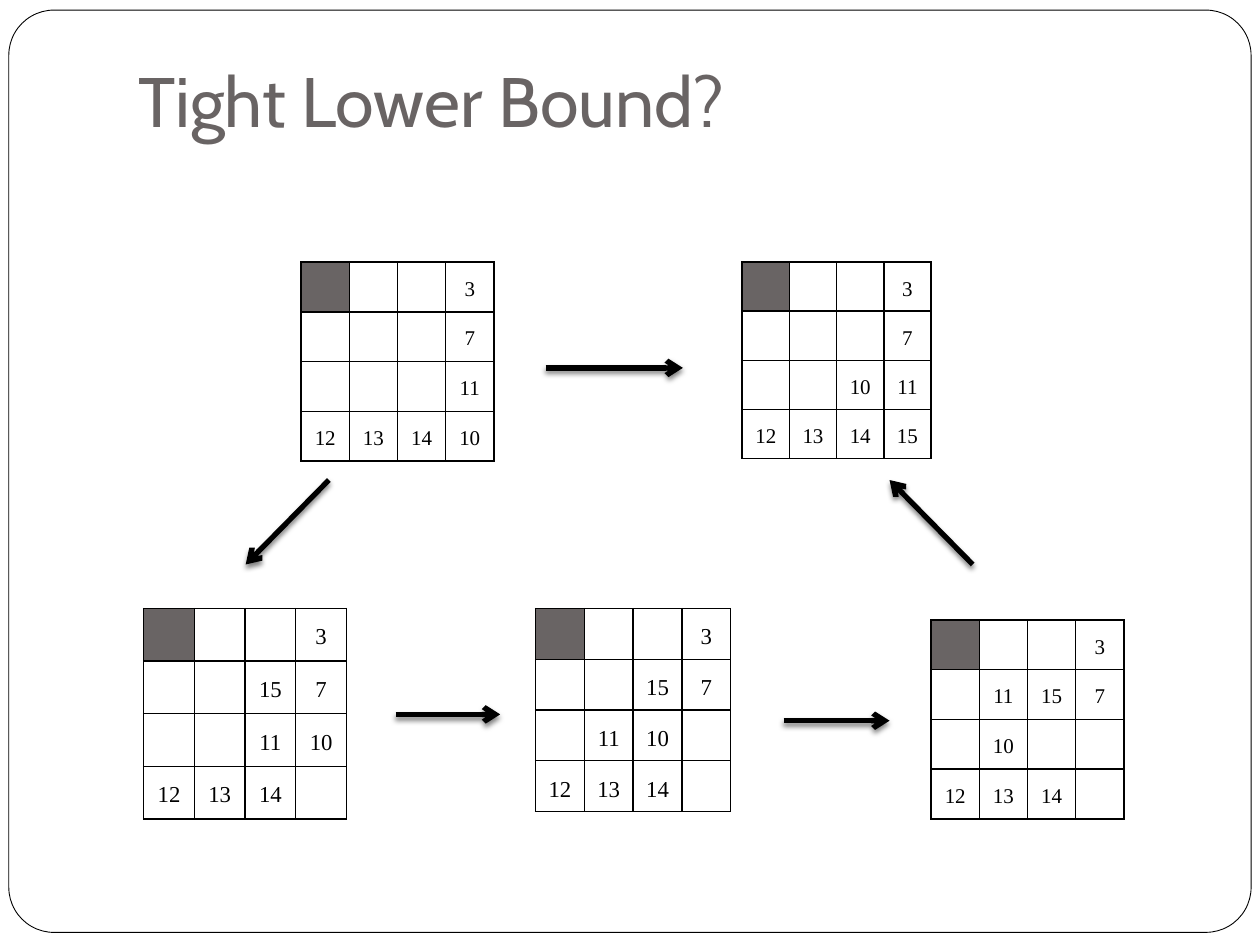
from dataclasses import dataclass
from lxml.etree import SubElement as Sub
from pptx import Presentation
from pptx.dml.color import RGBColor as RGB
from pptx.enum.shapes import MSO_CONNECTOR as Link, MSO_SHAPE as Kind
from pptx.enum.text import MSO_ANCHOR as Anchor, PP_ALIGN as Align
from pptx.oxml.ns import qn
from pptx.util import Inches, Pt


@dataclass(frozen=True)
class Theme:
    ink: RGB = RGB(0, 0, 0)
    gray: RGB = RGB(0x69, 0x64, 0x64)
    paper: RGB = RGB(255, 255, 255)
    head: str = "Cabin"
    body: str = "Times New Roman"
    title: Pt = Pt(40)
    small: Pt = Pt(12)
    large: Pt = Pt(13)
    edge: Pt = Pt(0.5)
    rule: Pt = Pt(1)
    bold: Pt = Pt(3)


theme = Theme()

BOARDS = [
    ((2.39, 2.08, 1.53, 1.58), theme.small,
     [["", "", "", "3"], ["", "", "", "7"],
      ["", "", "", "11"], ["12", "13", "14", "10"]]),
    ((5.89, 2.08, 1.5, 1.56), theme.small,
     [["", "", "", "3"], ["", "", "", "7"],
      ["", "", "10", "11"], ["12", "13", "14", "15"]]),
    ((1.14, 4.83, 1.61, 1.67), theme.large,
     [["", "", "", "3"], ["", "", "15", "7"],
      ["", "", "11", "10"], ["12", "13", "14", ""]]),
    ((4.25, 4.83, 1.55, 1.61), theme.large,
     [["", "", "", "3"], ["", "", "15", "7"],
      ["", "11", "10", ""], ["12", "13", "14", ""]]),
    ((7.39, 4.92, 1.53, 1.58), theme.small,
     [["", "", "", "3"], ["", "11", "15", "7"],
      ["", "10", "", ""], ["12", "13", "14", ""]]),
]

ARROWS = [
    (4.33, 2.92, 5.42, 2.92),
    (2.61, 3.81, 1.95, 4.48),
    (3.14, 5.67, 3.97, 5.67),
    (6.22, 5.72, 7.06, 5.72),
    (7.72, 4.48, 7.06, 3.81),
]


def inch(box):
    return [Inches(v) for v in box]


def add_frame(slide, box):
    frame = slide.shapes.add_shape(Kind.ROUNDED_RECTANGLE, *inch(box))
    frame.adjustments[0] = 0.049
    frame.shadow.inherit = False
    frame.fill.solid()
    frame.fill.fore_color.rgb = theme.paper
    frame.line.color.rgb = theme.ink
    frame.line.width = theme.edge
    slide.shapes._spTree.insert(2, frame._element)


def add_title(slide, box, text):
    title = slide.shapes.title
    title.left, title.top, title.width, title.height = inch(box)
    body = title.text_frame
    body.text = text
    body.vertical_anchor = Anchor.BOTTOM
    body.margin_bottom = Inches(0.1)
    para = body.paragraphs[0]
    para.alignment = Align.LEFT
    font = para.runs[0].font
    font.name, font.size = theme.head, theme.title
    font.color.rgb = theme.gray


def add_rules(cell):
    props = cell._tc.get_or_add_tcPr()
    for side in ("lnL", "lnR", "lnT", "lnB"):
        line = Sub(props, qn(f"a:{side}"), w=str(theme.rule))
        fill = Sub(line, qn("a:solidFill"))
        Sub(fill, qn("a:srgbClr"), val=str(theme.ink))


def fill_cell(cell, text, size, color):
    cell.margin_left = cell.margin_right = Inches(0.07)
    cell.margin_top = cell.margin_bottom = Inches(0.03)
    add_rules(cell)
    cell.fill.solid()
    cell.fill.fore_color.rgb = color
    if text:
        para = cell.text_frame.paragraphs[0]
        para.text = text
        para.alignment = Align.CENTER
        para.line_spacing = 1.5
        font = para.runs[0].font
        font.name, font.size = theme.body, size
        font.color.rgb = theme.ink


def add_board(slide, box, size, rows):
    count = len(rows)
    x, y, w, h = inch(box)
    table = slide.shapes.add_table(count, count, x, y, w, h).table
    table.first_row = table.horz_banding = False
    for r, row in enumerate(rows):
        table.rows[r].height = h // count
        table.columns[r].width = w // count
        for c, text in enumerate(row):
            color = theme.gray if r == c == 0 else theme.paper
            fill_cell(table.cell(r, c), text, size, color)


def add_arrow(slide, ends):
    arrow = slide.shapes.add_connector(Link.STRAIGHT, *inch(ends))
    arrow.line.color.rgb = theme.ink
    arrow.line.width = theme.bold
    Sub(arrow.line._get_or_add_ln(), qn("a:tailEnd"), type="arrow")
    glow = Sub(arrow._element.spPr, qn("a:effectLst"))
    shade = Sub(glow, qn("a:outerShdw"), blurRad=str(Pt(3)),
                dist=str(Pt(2)), dir="5400000", rotWithShape="0")
    tint = Sub(shade, qn("a:srgbClr"), val=str(theme.ink))
    Sub(tint, qn("a:alpha"), val="50000")


def main():
    deck = Presentation()
    deck.slide_width, deck.slide_height = Inches(10), Inches(7.5)
    slide = deck.slides.add_slide(deck.slide_layouts[5])
    add_frame(slide, (0.07, 0.08, 9.86, 7.32))
    add_title(slide, (1, 0.17, 8.5, 1.05), "Tight Lower Bound?")
    for box, size, rows in BOARDS:
        add_board(slide, box, size, rows)
    for ends in ARROWS:
        add_arrow(slide, ends)
    deck.save("out.pptx")


if __name__ == "__main__":
    main()
